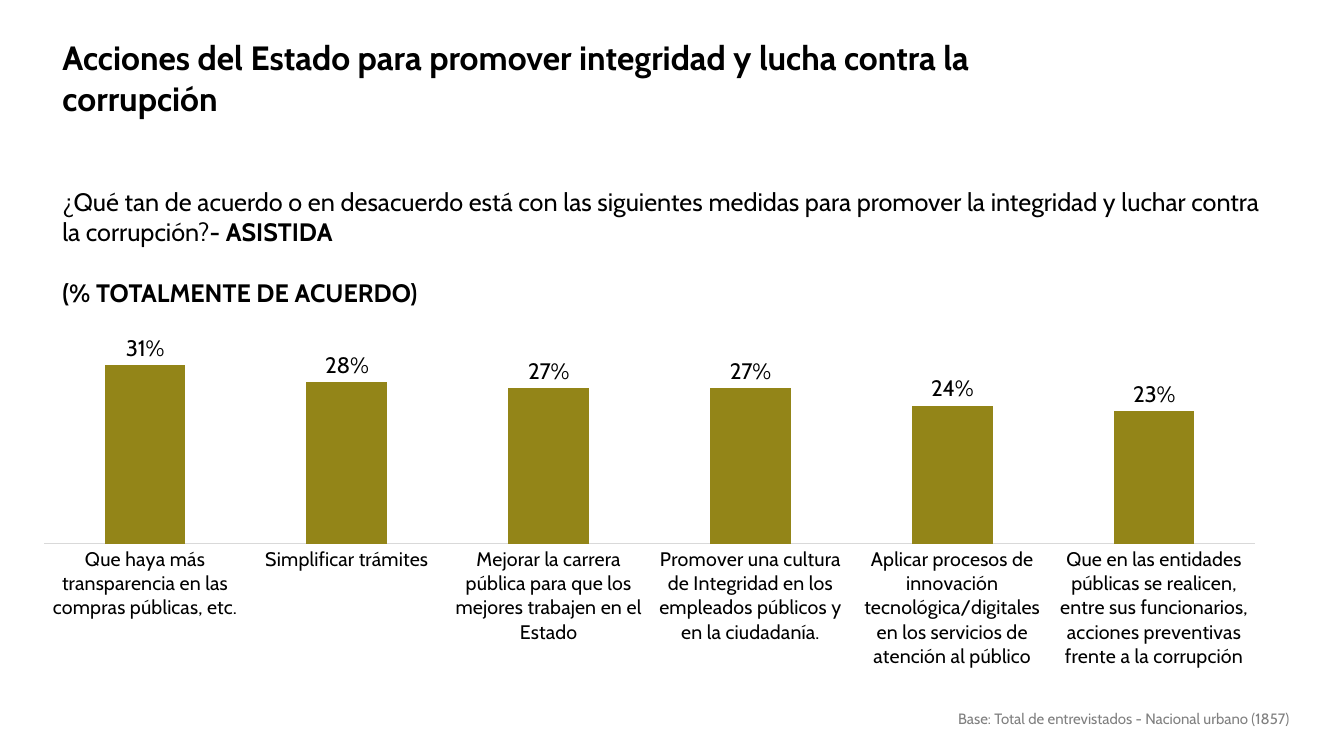
from dataclasses import dataclass

from lxml import etree
from pptx import Presentation
from pptx import util as u
from pptx.chart.data import CategoryChartData
from pptx.dml.color import RGBColor
from pptx.enum import chart as ch, text
from pptx.oxml.ns import qn


@dataclass(frozen=True)
class Theme:
    font: str = "Cabin"
    ink: str = "000000"
    muted: str = "808080"
    bar: str = "938518"
    axis: str = "D9D9D9"
    title: float = 24
    question: float = 18
    value: float = 16
    category: float = 14
    base: float = 10.7


THEME = Theme()
WIDTH, HEIGHT = u.Inches(13.33), u.Inches(7.5)
COLUMN, ROW = WIDTH / 100, HEIGHT / 100

MEASURES = {
    "Que haya más transparencia en las compras públicas, etc.": 0.31,
    "Simplificar trámites": 0.28,
    "Mejorar la carrera pública para que los mejores trabajen en el Estado": 0.27,
    "Promover una cultura de Integridad en los empleados públicos y en la ciudadanía.": 0.27,
    "Aplicar procesos de innovación tecnológica/digitales en los servicios de atención al público": 0.24,
    "Que en las entidades públicas se realicen, entre sus funcionarios, acciones preventivas frente a la corrupción": 0.23,
}


def grid_box(column, row, columns, rows):
    return [int(n) for n in (column * COLUMN, row * ROW, columns * COLUMN, rows * ROW)]


def set_all(target, **values):
    for name, value in values.items():
        setattr(target, name, value)


def style_font(font, size, color=THEME.ink, bold=False):
    set_all(font, name=THEME.font, size=u.Pt(size), bold=bold)
    font.color.rgb = RGBColor.from_string(color)


def write(paragraph, wording, size, color=THEME.ink, bold=False):
    run = paragraph.add_run()
    run.text = wording
    style_font(run.font, size, color, bold)


def prepare_frame(frame):
    set_all(frame, word_wrap=True, auto_size=text.MSO_AUTO_SIZE.NONE,
            vertical_anchor=text.MSO_ANCHOR.TOP)
    return frame


def add_title(slide, box):
    heading = slide.shapes.title
    set_all(heading, **dict(zip(("left", "top", "width", "height"), box)))
    paragraph = prepare_frame(heading.text_frame).paragraphs[0]
    paragraph.alignment = text.PP_ALIGN.LEFT
    write(paragraph, "Acciones del Estado para promover integridad y lucha contra la corrupción",
          THEME.title, bold=True)


def add_question(slide, box):
    frame = prepare_frame(slide.shapes.add_textbox(*box).text_frame)
    question = frame.paragraphs[0]
    write(question, "¿Qué tan de acuerdo o en desacuerdo está con las siguientes medidas "
          "para promover la integridad y luchar contra la corrupción?", THEME.question)
    write(question, "- ASISTIDA", THEME.question, bold=True)
    measure = frame.add_paragraph()
    measure.space_before = u.Pt(21.5)
    write(measure, "(% TOTALMENTE DE ACUERDO)", THEME.question, bold=True)


def place_plot(chart, **shares):
    area = chart._chartSpace.chart.plotArea
    for automatic in area.findall(qn("c:layout")):
        area.remove(automatic)
    layout = etree.Element(qn("c:layout"))
    manual = etree.SubElement(layout, qn("c:manualLayout"))
    settings = {"layoutTarget": "inner", "xMode": "edge", "yMode": "edge", **shares}
    for tag, value in settings.items():
        etree.SubElement(manual, qn(f"c:{tag}")).set("val", str(value))
    area.insert(0, layout)


def add_measures_chart(slide, box):
    data = CategoryChartData(number_format="0%")
    data.categories = list(MEASURES)
    data.add_series("Totalmente de acuerdo", list(MEASURES.values()))
    chart = slide.shapes.add_chart(ch.XL_CHART_TYPE.COLUMN_CLUSTERED, *box, data).chart
    set_all(chart, has_legend=False, has_title=False)
    style_font(chart.font, THEME.value)
    place_plot(chart, x=0, y=0.1, w=1, h=0.43)

    measures, agreement = chart.category_axis, chart.value_axis
    for axis in (measures, agreement):
        set_all(axis, has_major_gridlines=False, major_tick_mark=ch.XL_TICK_MARK.NONE,
                minor_tick_mark=ch.XL_TICK_MARK.NONE)
    style_font(measures.tick_labels.font, THEME.category)
    measures.format.line.color.rgb = RGBColor.from_string(THEME.axis)
    measures.format.line.width = u.Pt(0.75)
    set_all(agreement, minimum_scale=0, maximum_scale=0.35,
            tick_label_position=ch.XL_TICK_LABEL_POSITION.NONE)
    agreement.format.line.fill.background()

    plot = chart.plots[0]
    set_all(plot, gap_width=150, vary_by_categories=False, has_data_labels=True)
    set_all(plot.data_labels, show_value=True, number_format="0%",
            number_format_is_linked=False, position=ch.XL_LABEL_POSITION.OUTSIDE_END)
    style_font(plot.data_labels.font, THEME.value)
    bars = plot.series[0].format.fill
    bars.solid()
    bars.fore_color.rgb = RGBColor.from_string(THEME.bar)


def add_base(slide, box):
    base = prepare_frame(slide.shapes.add_textbox(*box).text_frame).paragraphs[0]
    set_all(base, alignment=text.PP_ALIGN.RIGHT, line_spacing=0.9)
    write(base, "Base: Total de entrevistados - Nacional urbano (1857)", THEME.base, THEME.muted)


def main():
    deck = Presentation()
    set_all(deck, slide_width=WIDTH, slide_height=HEIGHT)
    slide = deck.slides.add_slide(deck.slide_layouts.get_by_name("Title Only"))
    add_base(slide, grid_box(44.56, 93.47, 52.14, 3.47))
    add_title(slide, grid_box(3.9, 4.27, 74.57, 17.87))
    add_question(slide, grid_box(3.9, 24, 90.92, 17.47))
    add_measures_chart(slide, grid_box(3.25, 39.07, 90.17, 62))
    deck.save("out.pptx")


if __name__ == "__main__":
    main()
